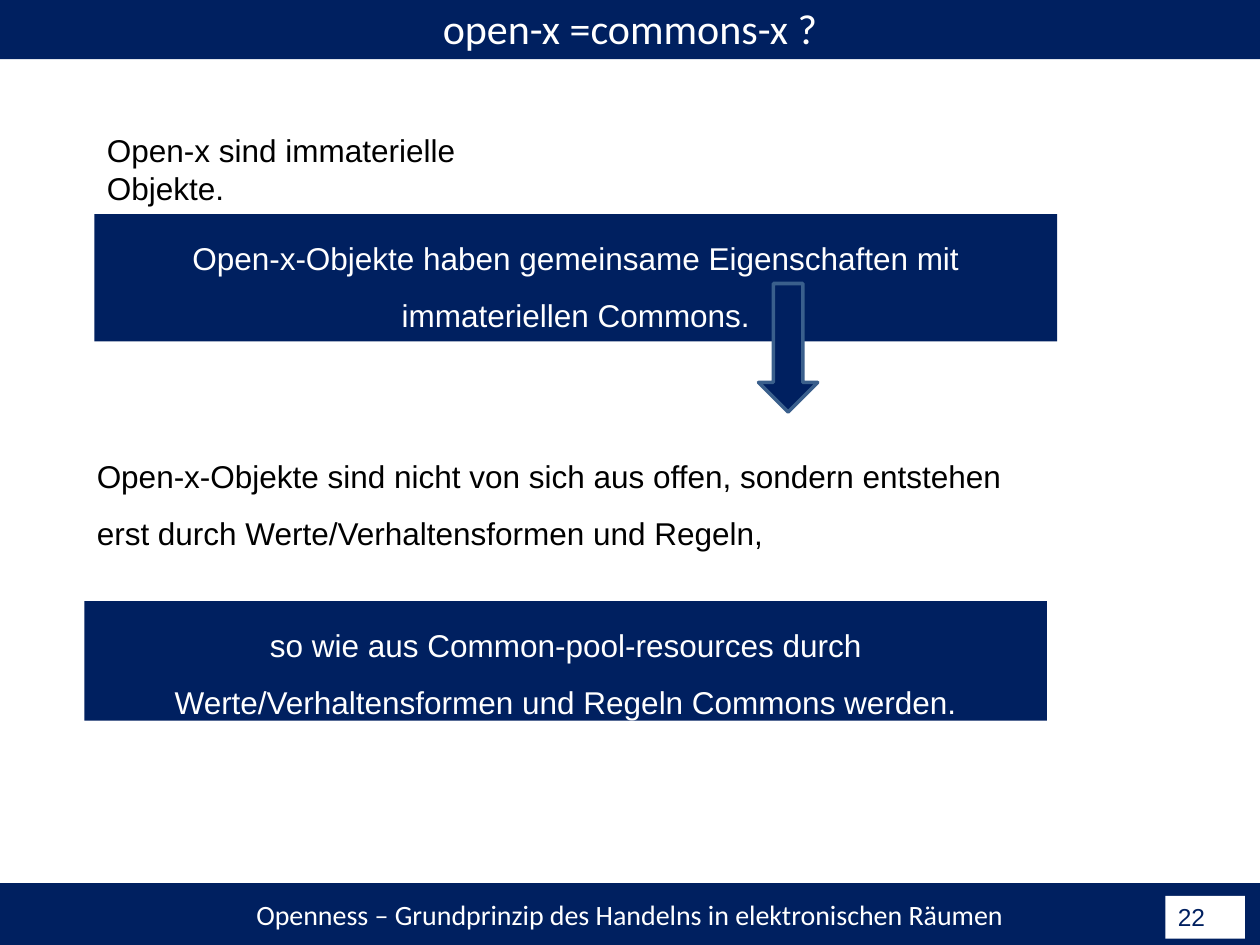
from pptx import Presentation
from pptx.dml.color import RGBColor
from pptx.enum.shapes import MSO_SHAPE
from pptx.enum.text import MSO_ANCHOR, PP_ALIGN
from pptx.util import Inches, Pt

COLORS = {"navy": "002060", "white": "FFFFFF", "black": "000000", "outline": "3A5F8C"}
BODY_WIDTH = 7.64


def color(name):
    return RGBColor.from_string(COLORS[name])


def write_text(shape, text, ink, size=18, font="Arial", align=PP_ALIGN.LEFT,
               spacing=None, anchor=MSO_ANCHOR.TOP):
    frame = shape.text_frame
    frame.word_wrap = True
    frame.vertical_anchor = anchor
    paragraph = frame.paragraphs[0]
    paragraph.alignment = align
    if spacing:
        paragraph.line_spacing = spacing
    run = paragraph.add_run()
    run.text = text
    for name, value in {"name": font, "size": Pt(size)}.items():
        setattr(run.font, name, value)
    run.font.color.rgb = color(ink)


def add_filled(slide, kind, box, fill, outline=None):
    shape = slide.shapes.add_shape(kind, *map(Inches, box))
    shape.shadow.inherit = False
    shape.fill.solid()
    shape.fill.fore_color.rgb = color(fill)
    if outline:
        shape.line.color.rgb = color(outline)
        shape.line.width = Pt(2)
    else:
        shape.line.fill.background()
    return shape


def add_panel(slide, box, text, fill="navy", ink="white", **text_format):
    panel = add_filled(slide, MSO_SHAPE.RECTANGLE, box, fill)
    write_text(panel, text, ink, **text_format)
    return panel


def add_statement(slide, box, text, **text_format):
    statement = slide.shapes.add_textbox(*map(Inches, box))
    write_text(statement, text, "black", **text_format)


def add_footer(slide):
    footer = add_panel(slide, (0, 7.01, 10, 0.49),
                       "Openness – Grundprinzip des Handelns in elektronischen Räumen",
                       size=16, font="Calibri", align=PP_ALIGN.CENTER,
                       anchor=MSO_ANCHOR.MIDDLE)
    for side in ("left", "top", "right", "bottom"):
        setattr(footer.text_frame, f"margin_{side}", 0)
    add_panel(slide, (9.25, 7.11, 0.63, 0.34), "22", fill="white", ink="navy", size=14)


def main():
    presentation = Presentation()
    presentation.slide_width = Inches(10)
    presentation.slide_height = Inches(7.5)
    slide = presentation.slides.add_slide(presentation.slide_layouts[6])

    add_footer(slide)
    add_panel(slide, (0, -0.03, 10, 0.5), "open-x =commons-x ?",
              size=24, font="Calibri", align=PP_ALIGN.CENTER)
    add_statement(slide, (0.75, 0.99, 3.94, 0.71), "Open-x sind immaterielle Objekte.")

    emphasis = {"align": PP_ALIGN.CENTER, "spacing": 1.5}
    add_panel(slide, (0.75, 1.7, BODY_WIDTH, 1.01),
              "Open-x-Objekte haben gemeinsame Eigenschaften mit immateriellen Commons.",
              **emphasis)
    add_filled(slide, MSO_SHAPE.DOWN_ARROW, (6.02, 2.25, 0.47, 1.02), "navy", "outline")
    add_statement(slide, (0.67, 3.43, BODY_WIDTH, 1.01),
                  "Open-x-Objekte sind nicht von sich aus offen, sondern entstehen "
                  "erst durch Werte/Verhaltensformen und Regeln,", spacing=1.5)
    add_panel(slide, (0.67, 4.77, BODY_WIDTH, 0.95),
              "so wie aus Common-pool-resources durch Werte/Verhaltensformen "
              "und Regeln Commons werden.", **emphasis)

    presentation.save("out.pptx")


if __name__ == "__main__":
    main()
